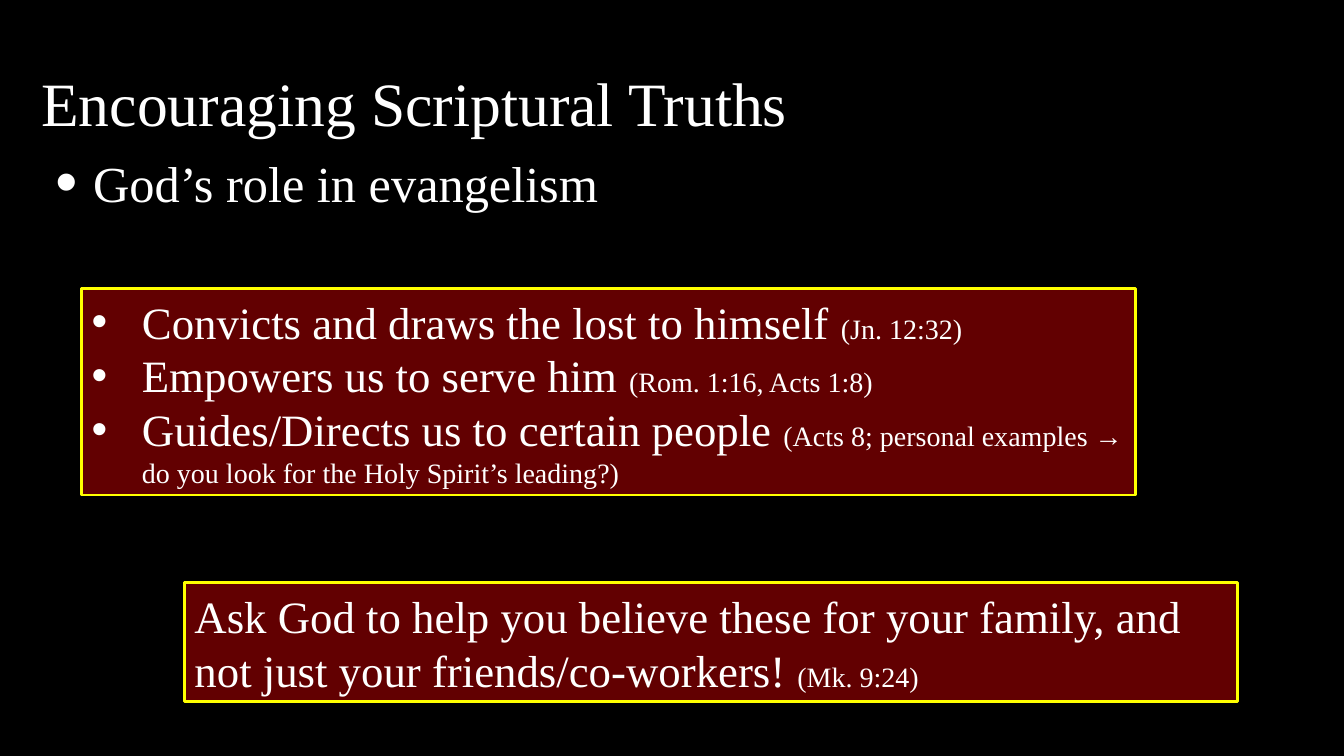
from lxml import etree
from pptx import Presentation
from pptx.dml import color
from pptx.enum import shapes, text
from pptx.oxml import ns
from pptx.util import Pt

FONT = "Times New Roman"
WHITE, BLACK, MAROON, YELLOW = "FFFFFF", "000000", "620001", "FFFF00"
TRUTHS = [
    ("Convicts and draws the lost to himself ", "(Jn. 12:32)"),
    ("Empowers us to serve him ", "(Rom. 1:16, Acts 1:8)"),
    ("Guides/Directs us to certain people ",
     "(Acts 8; personal examples → do you look for the Holy Spirit’s leading?)"),
]
CHALLENGE = [
    ("Ask God to help you believe these for your family, and not just your friends/co-workers! ",
     "(Mk. 9:24)"),
]


def paint(target, value):
    """Give a fill, or the fill of a line, a solid colour."""
    target.solid()
    target.fore_color.rgb = color.RGBColor.from_string(value)


def add_bullet(paragraph, indent, percent=100):
    """Hang a round bullet in front of a paragraph."""
    properties = paragraph._p.get_or_add_pPr()
    properties.set("marL", str(Pt(indent)))
    properties.set("indent", str(-Pt(indent)))
    for tag, name, value in (("a:buSzPct", "val", str(percent * 1000)),
                             ("a:buFont", "typeface", "Arial"),
                             ("a:buChar", "char", "•")):
        etree.SubElement(properties, ns.qn(tag)).set(name, value)


def add_run(paragraph, wording, size):
    """Append white text of the given size."""
    run = paragraph.add_run()
    run.text = wording
    run.font.name = FONT
    run.font.size = Pt(size)
    paint(run.font.fill, WHITE)


def format_heading(shape, bounds, wording, size, top_margin):
    """Place a single line of heading text and return its paragraph."""
    shape.left, shape.top, shape.width, shape.height = map(Pt, bounds)
    frame = shape.text_frame
    frame.word_wrap = True
    frame.auto_size = text.MSO_AUTO_SIZE.NONE
    frame.vertical_anchor = text.MSO_ANCHOR.TOP
    frame.margin_top = Pt(top_margin)
    paragraph = frame.paragraphs[0]
    paragraph.alignment = text.PP_ALIGN.LEFT
    paragraph.line_spacing = 1.0
    paragraph.space_before = Pt(0)
    add_run(paragraph, wording, size)
    return paragraph


def add_panel(slide, bounds, entries, bulleted=False):
    """Draw a framed panel of statements with small references."""
    shape = slide.shapes.add_shape(shapes.MSO_SHAPE.ROUNDED_RECTANGLE, *map(Pt, bounds))
    shape.adjustments[0] = 0
    shape.shadow.inherit = False
    paint(shape.fill, MAROON)
    paint(shape.line.fill, YELLOW)
    shape.line.width = Pt(2)
    frame = shape.text_frame
    frame.word_wrap = True
    frame.vertical_anchor = text.MSO_ANCHOR.MIDDLE
    for index, (statement, reference) in enumerate(entries):
        paragraph = frame.add_paragraph() if index else frame.paragraphs[0]
        paragraph.alignment = text.PP_ALIGN.LEFT
        if bulleted:
            add_bullet(paragraph, 36)
        add_run(paragraph, statement, 32)
        add_run(paragraph, reference, 20)


def main():
    """Build and save the slide."""
    presentation = Presentation()
    presentation.slide_width, presentation.slide_height = Pt(960), Pt(540)
    slide = presentation.slides.add_slide(presentation.slide_layouts[5])
    paint(slide.background.fill, BLACK)
    format_heading(slide.shapes.title, (22.3, 26, 862, 53.3),
                   "Encouraging Scriptural Truths", 44, 20)
    role = format_heading(slide.shapes.add_textbox(0, 0, 0, 0), (32.4, 95.8, 862, 371.5),
                          "God’s role in evangelism", 36, 12.6)
    add_bullet(role, 27, 125)
    add_panel(slide, (58.3, 206, 753, 147.6), TRUTHS, bulleted=True)
    add_panel(slide, (131.8, 416.2, 752.4, 85), CHALLENGE)
    presentation.save("out.pptx")


if __name__ == "__main__":
    main()
